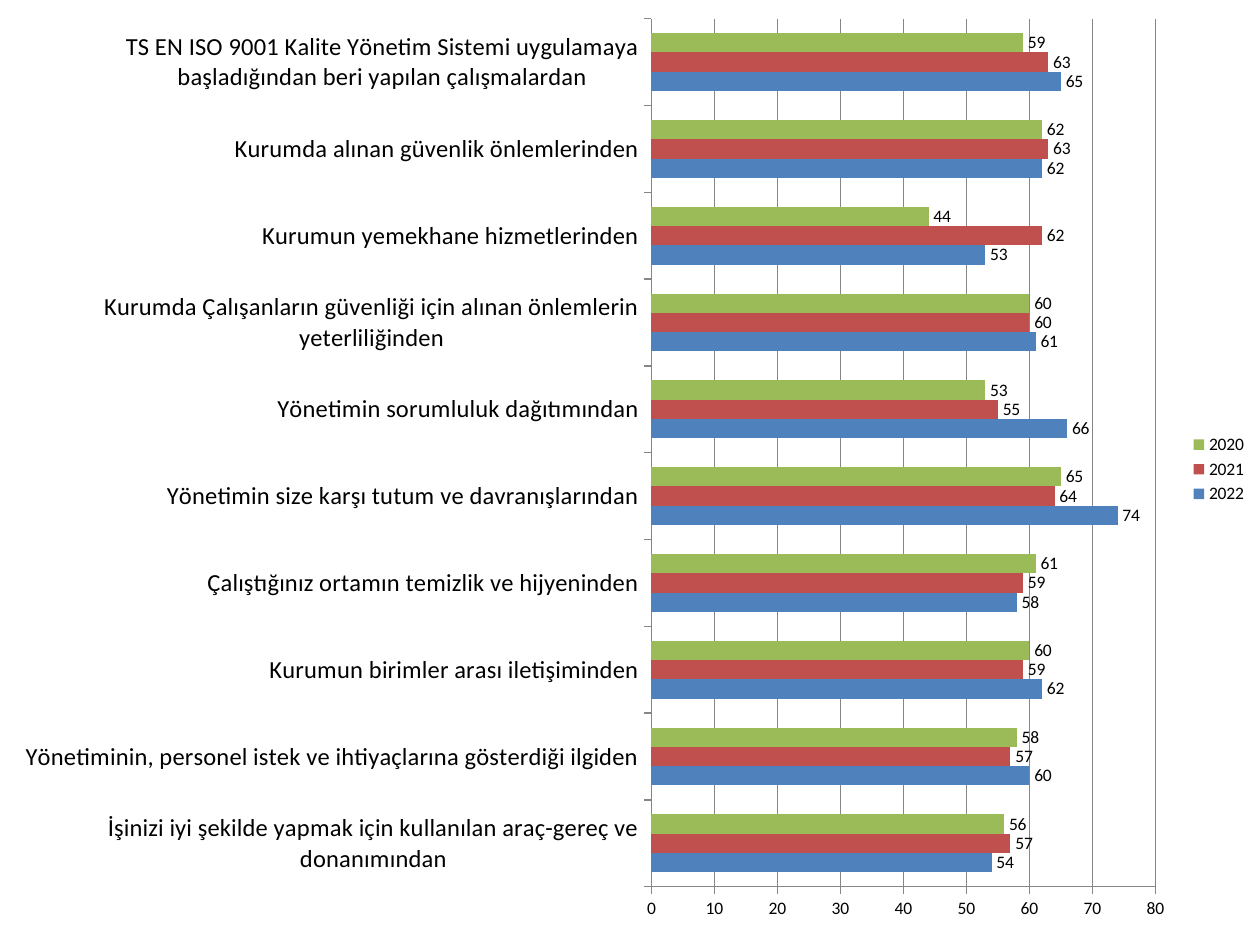
from dataclasses import dataclass

import lxml.etree
import pptx
import pptx.chart.data
import pptx.dml.color
import pptx.enum.chart
import pptx.oxml.ns
import pptx.util
from pptx.util import Cm

FONT = "Calibri"
BLACK = "000000"
AXIS_GRAY = "868686"


@dataclass
class YearSeries:
    name: str
    color: str
    values: list[int]


@dataclass
class PlotLayout:
    """Inner plot area, as fractions of the chart."""
    x: float
    y: float
    w: float
    h: float


CATEGORIES = [
    "İşinizi iyi şekilde yapmak için kullanılan araç-gereç ve donanımından",
    "Yönetiminin, personel istek ve ihtiyaçlarına gösterdiği ilgiden",
    "Kurumun birimler arası iletişiminden",
    "Çalıştığınız ortamın temizlik ve hijyeninden",
    "Yönetimin size karşı tutum ve davranışlarından",
    "Yönetimin sorumluluk dağıtımından",
    "Kurumda Çalışanların güvenliği için alınan önlemlerin yeterliliğinden",
    "Kurumun yemekhane hizmetlerinden",
    "Kurumda alınan güvenlik önlemlerinden",
    "TS EN ISO 9001 Kalite Yönetim Sistemi uygulamaya başladığından beri "
    "yapılan çalışmalardan",
]

YEARS = [
    YearSeries("2022", "4F81BD", [54, 60, 62, 58, 74, 66, 61, 53, 62, 65]),
    YearSeries("2021", "C0504D", [57, 57, 59, 59, 64, 55, 60, 62, 63, 63]),
    YearSeries("2020", "9BBB59", [56, 58, 60, 61, 65, 53, 60, 44, 62, 59]),
]


def rgb(color: str) -> pptx.dml.color.RGBColor:
    return pptx.dml.color.RGBColor.from_string(color)


def style_font(font, size: float) -> None:
    font.name = FONT
    font.size = pptx.util.Pt(size)
    font.color.rgb = rgb(BLACK)


def style_line(line) -> None:
    line.color.rgb = rgb(AXIS_GRAY)
    line.width = pptx.util.Pt(0.75)


def style_axis(axis, size: float) -> None:
    axis.major_tick_mark = pptx.enum.chart.XL_TICK_MARK.OUTSIDE
    axis.minor_tick_mark = pptx.enum.chart.XL_TICK_MARK.NONE
    style_line(axis.format.line)
    style_font(axis.tick_labels.font, size)


def style_series(series, year: YearSeries) -> None:
    series.format.fill.solid()
    series.format.fill.fore_color.rgb = rgb(year.color)
    series.invert_if_negative = False
    labels = series.data_labels
    labels.show_value = True
    labels.position = pptx.enum.chart.XL_LABEL_POSITION.OUTSIDE_END
    style_font(labels.font, 10)


def place_plot(chart, place: PlotLayout) -> None:
    qn = pptx.oxml.ns.qn
    plot_area = chart.plots[0]._element.getparent()
    for old in plot_area.findall(qn("c:layout")):
        plot_area.remove(old)
    layout = lxml.etree.Element(qn("c:layout"))
    manual = lxml.etree.SubElement(layout, qn("c:manualLayout"))
    settings = {"layoutTarget": "inner", "xMode": "edge", "yMode": "edge",
                "x": place.x, "y": place.y, "w": place.w, "h": place.h}
    for tag, value in settings.items():
        lxml.etree.SubElement(manual, qn(f"c:{tag}")).set("val", str(value))
    plot_area.insert(0, layout)


def add_survey_chart(page) -> None:
    data = pptx.chart.data.CategoryChartData(number_format="General")
    data.categories = CATEGORIES
    for year in YEARS:
        data.add_series(year.name, year.values)
    chart = page.shapes.add_chart(
        pptx.enum.chart.XL_CHART_TYPE.BAR_CLUSTERED,
        Cm(0), Cm(0), Cm(25.4), Cm(18.92), data).chart
    chart.has_title = False
    style_font(chart.font, 10)

    # Bars and their values
    plot = chart.plots[0]
    plot.gap_width = 150
    plot.vary_by_categories = False
    for series, year in zip(plot.series, YEARS):
        style_series(series, year)

    # Axes and gridlines
    style_axis(chart.category_axis, 14)
    style_axis(chart.value_axis, 10)
    chart.value_axis.minimum_scale = 0
    chart.value_axis.maximum_scale = 80
    chart.value_axis.major_unit = 10
    chart.value_axis.has_major_gridlines = True
    style_line(chart.value_axis.major_gridlines.format.line)

    # Legend
    chart.has_legend = True
    chart.legend.position = pptx.enum.chart.XL_LEGEND_POSITION.RIGHT
    chart.legend.include_in_layout = False
    style_font(chart.legend.font, 10)

    place_plot(chart, PlotLayout(0.517, 0.02, 0.4, 0.925))


def main() -> None:
    deck = pptx.Presentation()
    deck.slide_width, deck.slide_height = Cm(25.4), Cm(19.05)
    page = deck.slides.add_slide(deck.slide_layouts[6])
    add_survey_chart(page)
    deck.save("out.pptx")


if __name__ == "__main__":
    main()
